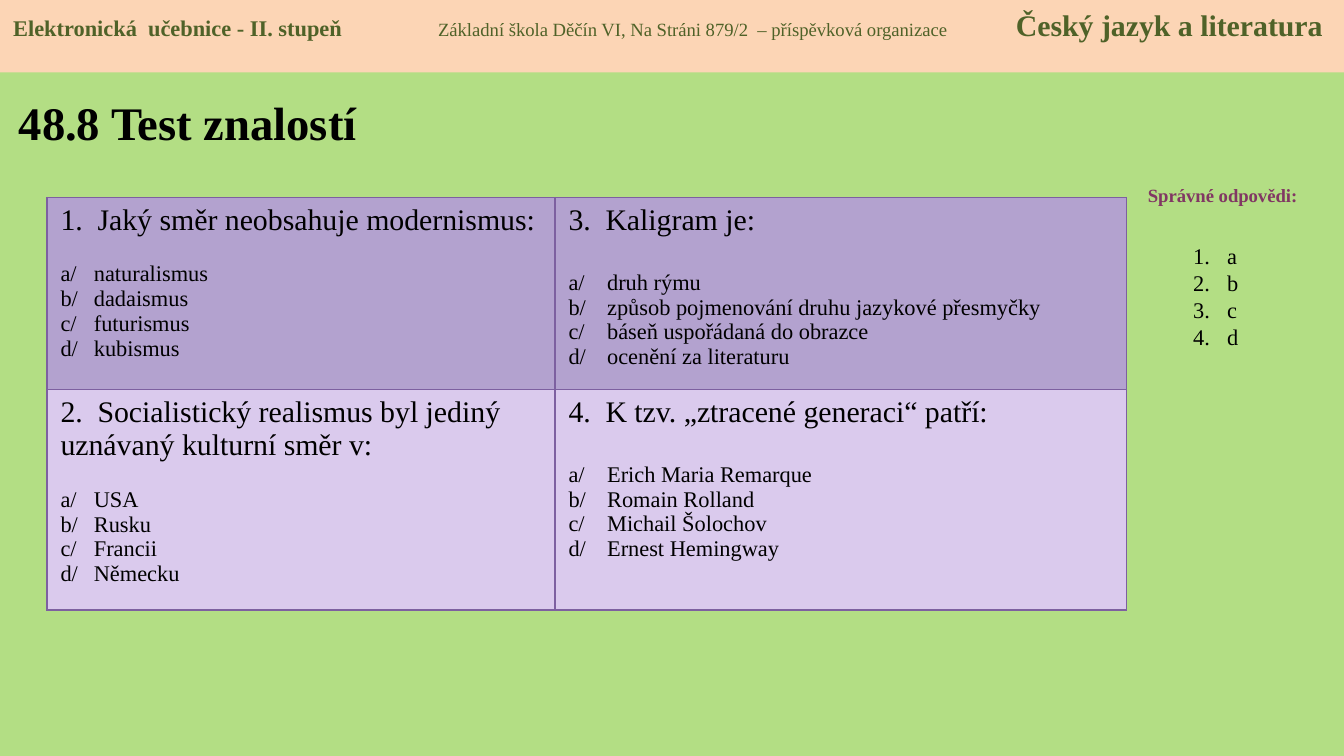
from lxml import etree
from pptx import Presentation
from pptx.dml.color import RGBColor
from pptx.enum.shapes import MSO_SHAPE
from pptx.enum.text import MSO_ANCHOR, MSO_AUTO_SIZE, PP_ALIGN
from pptx.oxml import parse_xml
from pptx.oxml.ns import nsdecls, qn
from pptx.util import Cm, Pt

RECT = MSO_SHAPE.RECTANGLE
TOP, MIDDLE = MSO_ANCHOR.TOP, MSO_ANCHOR.MIDDLE
LEFT, CENTER = PP_ALIGN.LEFT, PP_ALIGN.CENTER
FIXED = MSO_AUTO_SIZE.NONE

THEME = {
    "font": "Times New Roman",
    "page": "B3DE84", "band": "FCD5B5", "edge": "7D60A0",
    "rows": ["B3A2CF", "DACAED"],
    "title": {"size": Pt(25), "bold": True, "color": "000000"},
    "level": {"size": Pt(12), "bold": True, "color": "4F6228"},
    "school": {"size": Pt(10), "bold": False, "color": "4F6228"},
    "subject": {"size": Pt(16), "bold": True, "color": "4F6228"},
    "label": {"size": Pt(10), "bold": True, "color": "813763"},
    "question": {"size": Pt(16), "bold": False, "color": "000000"},
    "answer": {"size": Pt(12), "bold": False, "color": "000000"},
}


def write(para, text, role):
    """Add a run in the format of its role."""
    run = para.add_run()
    run.text = text
    run.font.name = THEME["font"]
    for key, value in THEME[role].items():
        if key == "color":
            run.font.color.rgb = RGBColor.from_string(value)
        else:
            setattr(run.font, key, value)


def set_tabs(para, stops):
    """Give a paragraph left tab stops."""
    tabs = etree.SubElement(para._p.get_or_add_pPr(), qn("a:tabLst"))
    for stop in stops:
        etree.SubElement(tabs, qn("a:tab"), pos=str(stop), algn="l")


deck = Presentation()
deck.slide_width, deck.slide_height = Cm(25.4), Cm(14.29)
slide = deck.slides.add_slide(deck.slide_layouts[5])
slide.background.fill.solid()
slide.background.fill.fore_color.rgb = RGBColor.from_string(THEME["page"])

# Title
title = slide.shapes.title
box = {"left": Cm(0.1), "top": Cm(1.47), "width": Cm(8.1), "height": Cm(1.65)}
for key, value in box.items():
    setattr(title, key, value)
frame = title.text_frame
frame.auto_size, frame.vertical_anchor = FIXED, MIDDLE
para = frame.paragraphs[0]
para.alignment = LEFT
write(para, "48.8 Test znalostí", "title")

# Label of the key
label = slide.shapes.add_textbox(Cm(21.11), Cm(3.35), Cm(3.99), Cm(0.68))
label.text_frame.word_wrap = True
para = label.text_frame.paragraphs[0]
para.alignment = CENTER
write(para, "Správné odpovědi:", "label")

# Quiz table
QUIZ = [
    [("1.\tJaký směr neobsahuje modernismus:",
      ["naturalismus", "dadaismus", "futurismus", "kubismus"]),
     ("3.\tKaligram je:",
      ["druh rýmu", "způsob pojmenování druhu jazykové přesmyčky",
       "báseň uspořádaná do obrazce", "ocenění za literaturu"])],
    [("2.\tSocialistický realismus byl jediný uznávaný kulturní směr v:",
      ["USA", "Rusku", "Francii", "Německu"]),
     ("4.\tK tzv. „ztracené generaci“ patří:",
      ["Erich Maria Remarque", "Romain Rolland", "Michail Šolochov",
       "Ernest Hemingway"])],
]
WIDTHS, HEIGHTS = [Cm(9.6), Cm(10.8)], [Cm(3.63), Cm(4.17)]
INDENTS, GAPS = [Cm(0.63), Cm(0.73)], [Pt(13.3), Pt(17.7)]

table = slide.shapes.add_table(
    2, 2, Cm(0.89), Cm(3.73), sum(WIDTHS), sum(HEIGHTS)).table
table.first_row = table.horz_banding = False
for col, width in zip(table.columns, WIDTHS):
    col.width = width
for row, height in zip(table.rows, HEIGHTS):
    row.height = height

for r, line in enumerate(QUIZ):
    for c, (question, answers) in enumerate(line):
        cell = table.cell(r, c)
        cell.fill.solid()
        cell.fill.fore_color.rgb = RGBColor.from_string(THEME["rows"][r])
        for n, side in enumerate(["lnL", "lnR", "lnT", "lnB"]):
            cell._tc.get_or_add_tcPr().insert(n, parse_xml(
                f'<a:{side} {nsdecls("a")} w="{Pt(0.75)}"><a:solidFill>'
                f'<a:srgbClr val="{THEME["edge"]}"/></a:solidFill></a:{side}>'))
        para = cell.text_frame.paragraphs[0]
        set_tabs(para, [Cm(0.7)])
        write(para, question, "question")
        for n, (mark, answer) in enumerate(zip("abcd", answers)):
            para = cell.text_frame.add_paragraph()
            set_tabs(para, [INDENTS[c]])
            if n == 0:
                para.space_before = GAPS[c]
            write(para, f"{mark}/\t{answer}", "answer")

# Numbered key
key_box = slide.shapes.add_textbox(Cm(22.3), Cm(4.45), Cm(1.4), Cm(2.8))
frame = key_box.text_frame
frame.word_wrap = True
for n, mark in enumerate("abcd"):
    para = frame.add_paragraph() if n else frame.paragraphs[0]
    props = para._p.get_or_add_pPr()
    props.set("marL", str(Cm(0.64)))
    props.set("indent", str(-Cm(0.64)))
    etree.SubElement(props, qn("a:buFont"), typeface=THEME["font"])
    etree.SubElement(props, qn("a:buAutoNum"), type="arabicPeriod")
    para.line_spacing = Pt(14.5)
    write(para, mark, "answer")

# Header band
band = slide.shapes.add_shape(RECT, 0, 0, deck.slide_width, Cm(1.37))
band.shadow.inherit = False
band.fill.solid()
band.fill.fore_color.rgb = RGBColor.from_string(THEME["band"])
band.line.fill.background()
band.text_frame.vertical_anchor = TOP
para = band.text_frame.paragraphs[0]
set_tabs(para, [Cm(8.03), Cm(18.95)])
para.alignment = LEFT
write(para, "Elektronická  učebnice - II. stupeň\t", "level")
write(para, "Základní škola Děčín VI, Na Stráni 879/2  – příspěvková organizace\t",
      "school")
write(para, "Český jazyk a literatura", "subject")

deck.save("out.pptx")
